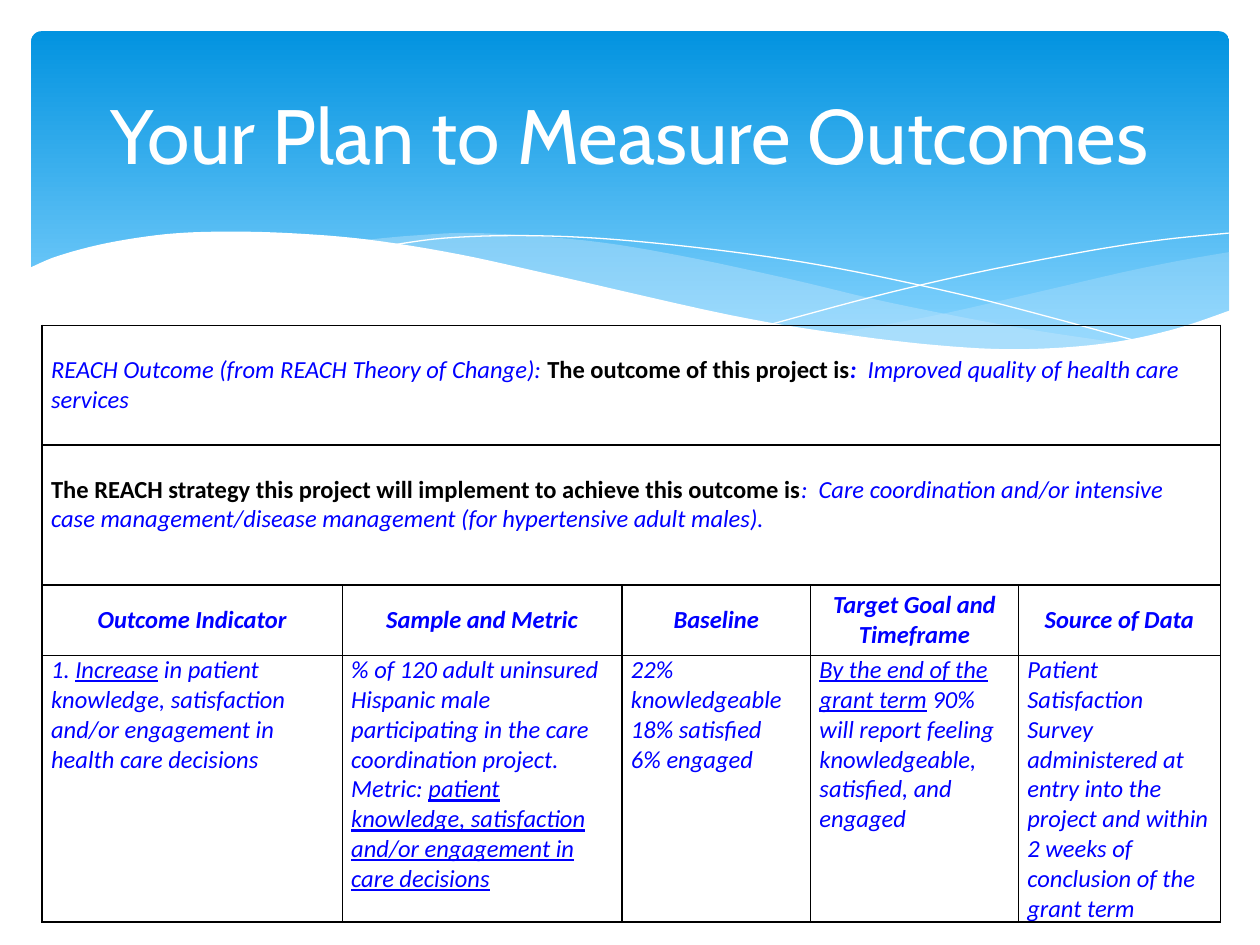
from lxml.etree import SubElement
from pptx import Presentation
from pptx.dml.color import RGBColor
from pptx.enum.shapes import MSO_SHAPE as Shape
from pptx.enum.text import MSO_ANCHOR as Anchor, PP_ALIGN as Align
from pptx.oxml import parse_xml
from pptx.oxml.ns import nsdecls, qn
from pptx.util import Cm, Pt

WHITE = RGBColor(0xFF, 0xFF, 0xFF)
BLACK = RGBColor(0, 0, 0)
BLUE = RGBColor(0, 0, 0xFF)
BANNER_TOP = RGBColor(0x02, 0x93, 0xE0)
BANNER_BOTTOM = RGBColor(0x83, 0xD3, 0xFE)
PALE_BLUE = RGBColor(0xC6, 0xE7, 0xFC)

BODY = {"name": "Calibri", "size": Pt(14), "bold": False, "italic": True, "underline": False}
BLUE_ITALIC = (BODY, BLUE)
BLUE_BOLD = ({**BODY, "bold": True}, BLUE)
BLUE_UNDERLINED = ({**BODY, "underline": True}, BLUE)
BLACK_BOLD = ({**BODY, "bold": True, "italic": False}, BLACK)
TITLE = ({"name": "Cabin", "size": Pt(44)}, WHITE)

RIGHT_WAVE = [
    [(24.79, 5.08), (23.75, 5.26), (22.63, 5.49), (21.13, 5.84), (19.13, 6.3),
     (17.93, 6.53), (16.79, 6.73)],
    [(16.79, 6.73), (17.91, 6.88), (19.23, 7.01), (20.68, 7.06), (22.15, 6.96),
     (23.39, 6.73), (24.79, 6.27)],
]
MIDDLE_WAVE = [
    [(22.68, 6.93), (20.5, 6.6), (17.93, 6.1), (15.98, 5.64), (13.74, 5.16),
     (11.81, 4.85), (9.65, 4.7), (8.33, 4.75), (7.26, 4.85)],
    [(7.26, 4.85), (9.19, 5.16), (11.4, 5.64), (13.46, 6.1), (15.7, 6.55),
     (17.65, 6.86), (19.33, 7.04), (20.78, 7.06), (22.68, 6.93)],
]
FALLING_LINE = [(7.85, 4.95), (8.97, 4.8), (10.57, 4.75), (12.42, 4.83), (14.78, 5.08),
                (16.89, 5.41), (19.3, 5.92), (21.11, 6.38), (23.04, 6.91)]
RISING_LINE = [(15.57, 6.53), (17.65, 5.97), (19.71, 5.49), (22, 5.05), (23.47, 4.83),
               (24.77, 4.7)]
WHITE_WAVE = [
    [(24.82, 6.25), (23.62, 6.65), (22.23, 6.93), (20.55, 7.04), (18.9, 6.96),
     (16.97, 6.73), (14.71, 6.35), (11.35, 5.59), (9.27, 5.13), (7.42, 4.83),
     (5.84, 4.7), (4.5, 4.67), (3.35, 4.72), (2.16, 4.9), (1.17, 5.16), (0.58, 5.41)],
    [(0.58, 8.36), (24.82, 8.36)],
]

COLUMN_WIDTHS = [6.05, 5.64, 3.8, 4.19, 4.07]
ROW_HEIGHTS = [2.41, 2.82, 1.42, 5.38]
STATEMENTS = [
    [("REACH Outcome (from REACH Theory of Change): ", BLUE_ITALIC),
     ("The outcome of this project is", BLACK_BOLD),
     (":", BLUE_BOLD),
     ("  Improved quality of health care services", BLUE_ITALIC)],
    [("The REACH strategy this project will implement to achieve this outcome is", BLACK_BOLD),
     (":  Care coordination and/or intensive case management/disease management "
      "(for hypertensive adult males).", BLUE_ITALIC)],
]
HEADINGS = ["Outcome Indicator", "Sample and Metric", "Baseline",
            "Target Goal and Timeframe", "Source of Data"]
DETAILS = [
    [[("1. ", BLUE_ITALIC), ("Increase", BLUE_UNDERLINED),
      (" in patient knowledge, satisfaction and/or engagement in health care decisions",
       BLUE_ITALIC)]],
    [[("% of 120 adult uninsured Hispanic male participating in the care coordination "
       "project.  Metric: ", BLUE_ITALIC),
      ("patient knowledge, satisfaction and/or engagement in care decisions",
       BLUE_UNDERLINED)]],
    [[(line, BLUE_ITALIC)] for line in ("22% knowledgeable", "18% satisfied", "6% engaged")],
    [[("By the end of the grant term", BLUE_UNDERLINED),
      (" 90% will report feeling knowledgeable, satisfied, and engaged", BLUE_ITALIC)]],
    [[("Patient Satisfaction Survey administered at entry into the project and within "
       "2 weeks of conclusion of the grant term", BLUE_ITALIC)]],
]


def set_attributes(target, values):
    """Set every attribute named in a dict of values."""
    for name, value in values.items():
        setattr(target, name, value)


def write_text(frame, paragraphs, alignment=Align.LEFT):
    """Fill a text frame with paragraphs of styled runs."""
    for index, runs in enumerate(paragraphs):
        paragraph = frame.add_paragraph() if index else frame.paragraphs[0]
        paragraph.alignment = alignment
        for text, (values, color) in runs:
            run = paragraph.add_run()
            run.text = text
            set_attributes(run.font, values)
            run.font.color.rgb = color


def smooth(points, steps=6):
    """Return a Catmull-Rom curve running through the points."""
    padded = [points[0], *points, points[-1]]
    curve = [points[0]]
    for a, b, c, d in zip(padded, padded[1:], padded[2:], padded[3:]):
        for step in range(1, steps + 1):
            t = step / steps
            curve.append(tuple(
                (2 * q + (r - p) * t + (2 * p - 5 * q + 4 * r - s) * t ** 2
                 + (3 * q - p - 3 * r + s) * t ** 3) / 2
                for p, q, r, s in zip(a, b, c, d)))
    return curve


def add_curve(slide, edges, close):
    """Draw a freeform through smoothed edges."""
    points = [(Cm(x), Cm(y)) for edge in edges for x, y in smooth(edge)]
    builder = slide.shapes.build_freeform(*points[0])
    builder.add_line_segments(points[1:], close=close)
    shape = builder.convert_to_shape()
    shape.shadow.inherit = False
    return shape


def add_wave(slide, edges, color, opacity=100):
    """Add a filled wave without an outline."""
    shape = add_curve(slide, edges, True)
    shape.fill.solid()
    shape.fill.fore_color.rgb = color
    shape.line.fill.background()
    if opacity < 100:
        color_element = shape.fill._xPr.find(qn("a:solidFill"))[0]
        SubElement(color_element, qn("a:alpha"), val=str(opacity * 1000))


def add_hairline(slide, points):
    """Add a thin white curve."""
    shape = add_curve(slide, [points], False)
    shape.fill.background()
    shape.line.color.rgb = WHITE
    shape.line.width = Pt(0)


def add_banner(slide):
    """Add the rounded gradient banner."""
    shape = slide.shapes.add_shape(Shape.ROUNDED_RECTANGLE, Cm(0.63), Cm(0.63), Cm(24.15), Cm(6.86))
    shape.adjustments[0] = 0.03
    shape.shadow.inherit = False
    shape.line.fill.background()
    shape.fill.gradient()
    shape.fill.gradient_angle = 270
    stops = [(0, BANNER_TOP), (0.9, BANNER_BOTTOM)]
    for stop, (position, color) in zip(shape.fill.gradient_stops, stops):
        stop.position = position
        stop.color.rgb = color


def add_title(slide, text):
    """Add the centred slide title."""
    frame = slide.shapes.add_textbox(Cm(1.27), Cm(0.95), Cm(22.86), Cm(3.48)).text_frame
    set_attributes(frame, {"word_wrap": True, "vertical_anchor": Anchor.MIDDLE})
    write_text(frame, [[(text, TITLE)]], Align.CENTER)


def format_cell(cell, top=0.0, anchor=Anchor.TOP):
    """Give a cell its margins, black borders and no fill."""
    set_attributes(cell, {"margin_left": Cm(0.18), "margin_right": Cm(0.18),
                          "margin_top": Cm(top), "margin_bottom": Cm(0),
                          "vertical_anchor": anchor})
    properties = cell._tc.get_or_add_tcPr()
    for side in "LRTB":
        properties.append(parse_xml(
            f'<a:ln{side} {nsdecls("a")} w="{Pt(1)}"><a:solidFill>'
            f'<a:srgbClr val="{BLACK}"/></a:solidFill></a:ln{side}>'))
    cell.fill.background()


def add_outcome_table(slide):
    """Add the table of outcome statements and measures."""
    table = slide.shapes.add_table(
        len(ROW_HEIGHTS), len(COLUMN_WIDTHS), Cm(0.85), Cm(6.56),
        Cm(sum(COLUMN_WIDTHS)), Cm(sum(ROW_HEIGHTS))).table
    set_attributes(table, {"first_row": False, "horz_banding": False})
    for column, width in zip(table.columns, COLUMN_WIDTHS):
        column.width = Cm(width)
    for row, height in zip(table.rows, ROW_HEIGHTS):
        row.height = Cm(height)
    for index, runs in enumerate(STATEMENTS):
        for cell in table.rows[index].cells:
            format_cell(cell, top=0.6)
        table.cell(index, 0).merge(table.cell(index, len(COLUMN_WIDTHS) - 1))
        write_text(table.cell(index, 0).text_frame, [runs])
    for index, (heading, detail) in enumerate(zip(HEADINGS, DETAILS)):
        heading_cell, detail_cell = table.cell(2, index), table.cell(3, index)
        format_cell(heading_cell, anchor=Anchor.MIDDLE)
        write_text(heading_cell.text_frame, [[(heading, BLUE_BOLD)]], Align.CENTER)
        format_cell(detail_cell)
        write_text(detail_cell.text_frame, detail)


def main():
    """Build the outcomes slide and save it."""
    presentation = Presentation()
    set_attributes(presentation, {"slide_width": Cm(25.4), "slide_height": Cm(19.05)})
    slide = presentation.slides.add_slide(presentation.slide_layouts[6])
    add_banner(slide)
    add_wave(slide, RIGHT_WAVE, PALE_BLUE, 29)
    add_wave(slide, MIDDLE_WAVE, PALE_BLUE, 40)
    for points in (FALLING_LINE, RISING_LINE):
        add_hairline(slide, points)
    add_wave(slide, WHITE_WAVE, WHITE)
    add_title(slide, "Your Plan to Measure Outcomes")
    add_outcome_table(slide)
    presentation.save("out.pptx")


if __name__ == "__main__":
    main()
